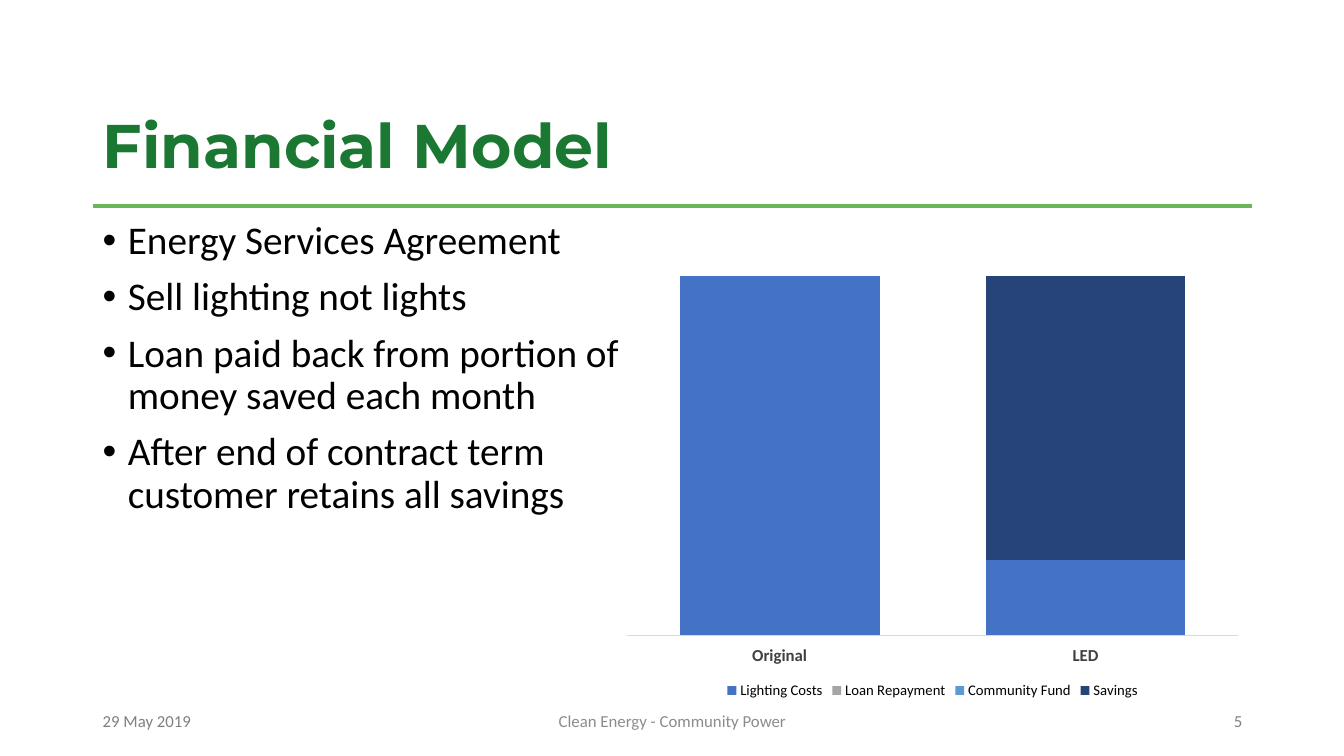
from lxml import etree
from pptx import Presentation
from pptx.chart.data import CategoryChartData
from pptx.dml.color import RGBColor
from pptx.enum.chart import XL_CHART_TYPE, XL_LEGEND_POSITION, XL_TICK_LABEL_POSITION, XL_TICK_MARK
from pptx.enum.shapes import MSO_CONNECTOR
from pptx.enum.text import MSO_ANCHOR, MSO_AUTO_SIZE, PP_ALIGN
from pptx.oxml import parse_xml
from pptx.oxml.ns import nsdecls, qn
from pptx.util import Inches, Pt

STACKED = XL_CHART_TYPE.COLUMN_STACKED
BELOW = XL_LEGEND_POSITION.BOTTOM
LOW = XL_TICK_LABEL_POSITION.LOW
NO_TICK = XL_TICK_MARK.NONE
STRAIGHT = MSO_CONNECTOR.STRAIGHT
TOP, MIDDLE, BOTTOM = MSO_ANCHOR.TOP, MSO_ANCHOR.MIDDLE, MSO_ANCHOR.BOTTOM
NO_FIT = MSO_AUTO_SIZE.NONE
LEFT, CENTER, RIGHT = PP_ALIGN.LEFT, PP_ALIGN.CENTER, PP_ALIGN.RIGHT

EDGE, END = 0.92, 12.42
POINTS = [
    "Energy Services Agreement",
    "Sell lighting not lights",
    "Loan paid back from portion of money saved each month",
    "After end of contract term customer retains all savings",
]
FOOTER = [
    ("29 May 2019", EDGE, 3, LEFT, "808080"),
    ("Clean Energy - Community Power", 4.42, 4.5, CENTER, "8C8C8C"),
    ("5", 9.42, 3, RIGHT, "808080"),
]
SERIES = [
    ("Lighting Costs", (100, 21), "4472C4"),
    ("Loan Repayment", (0, 0), "A5A5A5"),
    ("Community Fund", (0, 0), "5B9BD5"),
    ("Savings", (0, 79), "264478"),
]


def color(code):
    """Turn a hex string into a colour."""
    return RGBColor.from_string(code)


def apply(item, **values):
    """Set each given attribute on an object."""
    for name, value in values.items():
        setattr(item, name, value)


def style(font, size, code="000000", name="Calibri", bold=False):
    """Format a font."""
    apply(font, size=Pt(size), name=name, bold=bold)
    font.color.rgb = color(code)


def place(shape, left, top, width, height):
    """Move and size a shape."""
    apply(shape, left=Inches(left), top=Inches(top),
          width=Inches(width), height=Inches(height))


def add_title(slide, text):
    """Fill and format the title placeholder."""
    title = slide.shapes.title
    place(title, EDGE, 0.4, 10.07, 1.45)
    frame = title.text_frame
    apply(frame, text=text, auto_size=NO_FIT, word_wrap=True, vertical_anchor=BOTTOM)
    para = frame.paragraphs[0]
    apply(para, alignment=LEFT, line_spacing=0.9)
    style(para.runs[0].font, 44, "1B7832", "Montserrat", True)


def add_rule(slide):
    """Draw the line under the title."""
    rule = slide.shapes.add_connector(
        STRAIGHT, Inches(EDGE), Inches(2.04), Inches(END), Inches(2.04))
    rule.line.color.rgb = color("68B655")
    rule.line.width = Pt(3)
    etree.SubElement(rule._element.spPr, qn("a:effectLst"))


def add_text(slide, box, lines, size, code="000000", align=LEFT, anchor=TOP):
    """Add a text box and return its paragraphs."""
    frame = slide.shapes.add_textbox(*map(Inches, box)).text_frame
    apply(frame, word_wrap=True, vertical_anchor=anchor, text="\n".join(lines))
    for para in frame.paragraphs:
        para.alignment = align
        style(para.runs[0].font, size, code)
    return frame.paragraphs


def add_bullets(slide):
    """Add the bulleted list."""
    paras = add_text(slide, (EDGE, 2.14, 5.52, 4.62), POINTS, 28)
    for index, para in enumerate(paras):
        apply(para, line_spacing=0.9, space_before=Pt(10 if index else 0))
        props = para._p.get_or_add_pPr()
        props.set("marL", str(Inches(0.25)))
        props.set("indent", str(Inches(-0.25)))
        etree.SubElement(props, qn("a:buFont"), typeface="Arial")
        etree.SubElement(props, qn("a:buChar"), char="•")


def set_plot(chart, **sizes):
    """Fix the inner plot area as shares of the chart."""
    parts = "".join(f'<c:{key} val="{value}"/>' for key, value in sizes.items())
    area = chart._chartSpace.chart.plotArea
    for old in area.findall(qn("c:layout")):
        area.remove(old)
    area.insert(0, parse_xml(
        f'<c:layout {nsdecls("c")}><c:manualLayout><c:layoutTarget val="inner"/>'
        f'<c:xMode val="edge"/><c:yMode val="edge"/>{parts}'
        '</c:manualLayout></c:layout>'))


def add_costs(slide):
    """Add the stacked column chart of costs and savings."""
    data = CategoryChartData()
    data.categories = ["Original", "LED"]
    for name, values, _ in SERIES:
        data.add_series(name, values)
    box = map(Inches, (6.09, 2.16, 6.32, 4.82))
    chart = slide.shapes.add_chart(STACKED, *box, data).chart
    apply(chart, has_title=False, has_legend=True)
    style(chart.font, 10)
    apply(chart.legend, position=BELOW, include_in_layout=False)
    style(chart.legend.font, 10.5)
    plot = chart.plots[0]
    apply(plot, gap_width=53, overlap=100, vary_by_categories=False)
    for series, (_, _, code) in zip(plot.series, SERIES):
        series.format.fill.solid()
        series.format.fill.fore_color.rgb = color(code)
    apply(chart.value_axis, visible=False, has_major_gridlines=False,
          minimum_scale=0, maximum_scale=100)
    axis = chart.category_axis
    apply(axis, major_tick_mark=NO_TICK, minor_tick_mark=NO_TICK,
          tick_label_position=LOW)
    style(axis.tick_labels.font, 12, "404040", bold=True)
    axis.format.line.color.rgb = color("D9D9D9")
    axis.format.line.width = Pt(0.75)
    set_plot(chart, x=0.02, y=0.12, w=0.96, h=0.74)


def main():
    """Build and save the slide."""
    deck = Presentation()
    apply(deck, slide_width=Inches(13.33), slide_height=Inches(7.5))
    slide = deck.slides.add_slide(deck.slide_layouts[5])
    add_rule(slide)
    for text, left, width, align, code in FOOTER:
        add_text(slide, (left, 6.95, width, 0.4), [text], 12, code, align, MIDDLE)
    add_title(slide, "Financial Model")
    add_costs(slide)
    add_bullets(slide)
    deck.save("out.pptx")


if __name__ == "__main__":
    main()
